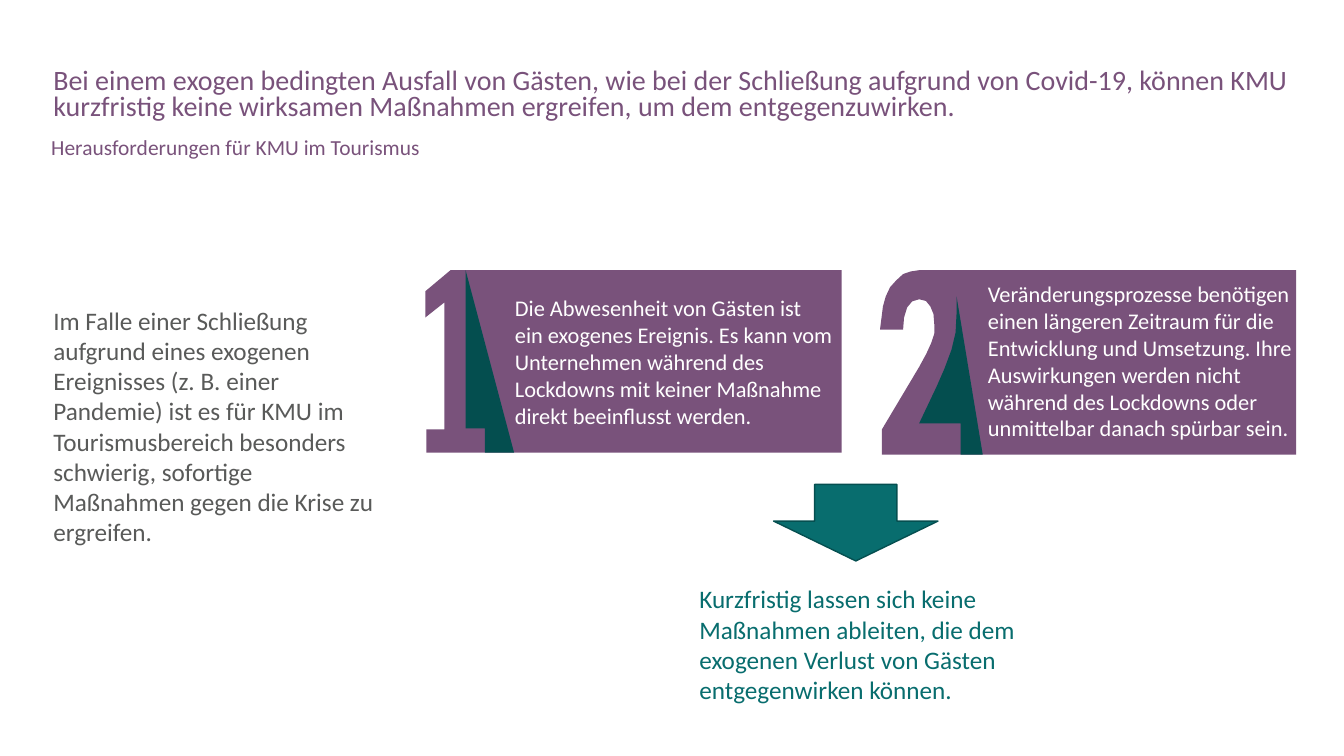
"""Slide on the challenges that a sudden loss of guests poses for tourism businesses."""
from pptx import Presentation
from pptx.dml.color import RGBColor
from pptx.enum.shapes import MSO_SHAPE as Shape
from pptx.enum.text import MSO_ANCHOR as Anchor
from pptx.util import Pt

PURPLE = RGBColor(0x79, 0x52, 0x7B)
TEAL = RGBColor(0x08, 0x6D, 0x6E)
TEAL_LINE = RGBColor(0x05, 0x4F, 0x50)
FOLD = RGBColor(0x04, 0x4E, 0x4F)
GREY = RGBColor(0x59, 0x5A, 0x59)
WHITE = RGBColor(0xFF, 0xFF, 0xFF)

deck = Presentation()
deck.slide_width, deck.slide_height = Pt(960), Pt(540)
page = deck.slides.add_slide(deck.slide_layouts[6])


def add_text(left, top, width, height, text, size, color, spacing=None, anchor=Anchor.TOP):
    box = page.shapes.add_textbox(Pt(left), Pt(top), Pt(width), Pt(height))
    frame = box.text_frame
    frame.word_wrap = True
    frame.vertical_anchor = anchor
    para = frame.paragraphs[0]
    para.text = text
    para.line_spacing = spacing
    para.font.name = "Calibri"
    para.font.size = Pt(size)
    para.font.color.rgb = color


def add_outline(points, color):
    corners = [(Pt(x), Pt(y)) for x, y in points]
    builder = page.shapes.build_freeform(*corners[0])
    builder.add_line_segments(corners[1:], close=True)
    outline = builder.convert_to_shape()
    outline.shadow.inherit = False
    outline.fill.solid()
    outline.fill.fore_color.rgb = color
    outline.line.fill.background()


one_banner = [
    (321.8, 193), (303.8, 208.1), (303.8, 226.8), (317.5, 216), (317.5, 306.7),
    (304.6, 306.7), (304.6, 323.3), (601.2, 323.3), (601.2, 193),
]
one_fold = [(367.2, 323.3), (332.6, 193), (332.6, 306), (346.3, 306), (346.3, 323.3)]
two_banner = [
    (656.6, 193), (650.6, 193.9), (645.1, 195.8), (640.2, 200.3), (635.8, 205.2),
    (632.7, 211.8), (630.7, 218.9), (628.6, 235.4), (645.1, 235.4), (645.8, 226.8),
    (648, 219.6), (651.6, 215.3), (656.6, 213.8), (661.4, 215), (664.6, 218.9),
    (666.8, 224.3), (667.4, 231.8), (667.4, 238.3), (665.3, 244.8), (661.7, 252.7),
    (656.6, 262.1), (630, 306.7), (630, 324.7), (925.9, 324.7), (925.9, 193),
]
two_fold = [
    (702, 324.7), (683.3, 211.7), (683.3, 223.9), (682.6, 237.6), (679.7, 249.8),
    (674.6, 263.5), (668.9, 276.5), (656.6, 302.4), (686.2, 302.4), (686.2, 324.7),
]

add_text(31, 128.9, 251.3, 350.6,
         "Im Falle einer Schließung aufgrund eines exogenen Ereignisses (z. B. einer Pandemie) "
         "ist es für KMU im Tourismusbereich besonders schwierig, sofortige Maßnahmen gegen "
         "die Krise zu ergreifen.", 18, GREY, anchor=Anchor.MIDDLE)
add_text(31, 45.4, 902.9, 46.1,
         "Bei einem exogen bedingten Ausfall von Gästen, wie bei der Schließung aufgrund von "
         "Covid-19, können KMU kurzfristig keine wirksamen Maßnahmen ergreifen, um dem "
         "entgegenzuwirken.", 20, PURPLE, spacing=0.8)
add_text(29.5, 97.2, 904.3, 20.2, "Herausforderungen für KMU im Tourismus", 15.3, PURPLE,
         spacing=0.7)

for points, color in [(one_banner, PURPLE), (one_fold, FOLD),
                      (two_banner, PURPLE), (two_fold, FOLD)]:
    add_outline(points, color)

add_text(360.7, 206.6, 241.2, 104.4,
         "Die Abwesenheit von Gästen ist ein exogenes Ereignis. Es kann vom Unternehmen "
         "während des Lockdowns mit keiner Maßnahme direkt beeinflusst werden.", 16, WHITE)
add_text(698.6, 196.6, 233.3, 123.8,
         "Veränderungsprozesse benötigen einen längeren Zeitraum für die Entwicklung und "
         "Umsetzung. Ihre Auswirkungen werden nicht während des Lockdowns oder unmittelbar "
         "danach spürbar sein.", 16, WHITE)

arrow = page.shapes.add_shape(Shape.DOWN_ARROW, Pt(552.6), Pt(346), Pt(117.4), Pt(54.7))
arrow.adjustments[0] = 0.5
arrow.adjustments[1] = 0.52
arrow.shadow.inherit = False
arrow.fill.solid()
arrow.fill.fore_color.rgb = TEAL
arrow.line.color.rgb = TEAL_LINE
arrow.line.width = Pt(1)

add_text(492.5, 413.3, 271.4, 94.3,
         "Kurzfristig lassen sich keine Maßnahmen ableiten, die dem exogenen Verlust von "
         "Gästen entgegenwirken können.", 18, TEAL)

deck.save("out.pptx")
